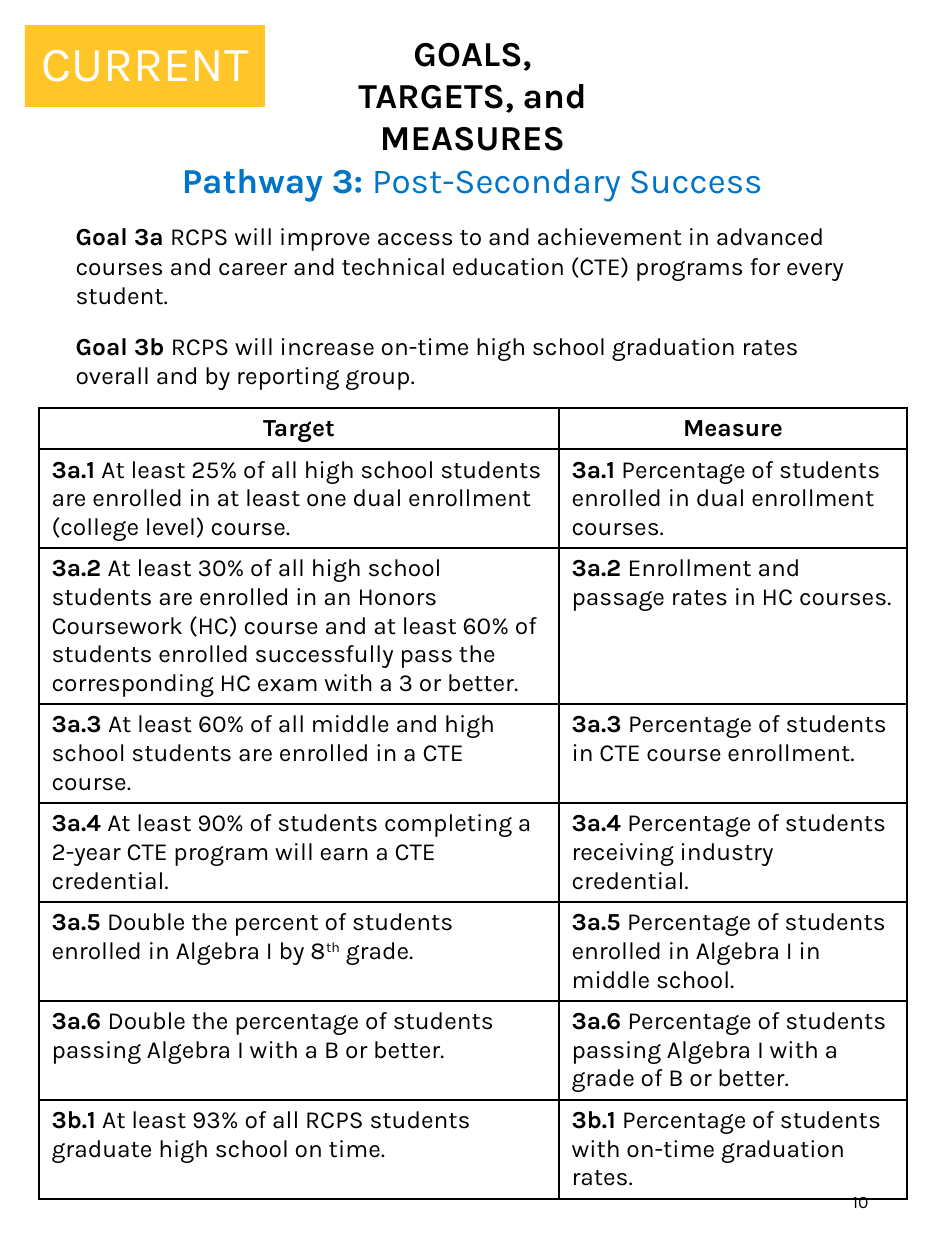
from lxml.etree import SubElement
from pptx import Presentation
from pptx.dml.color import RGBColor
from pptx.enum.shapes import MSO_SHAPE
from pptx.enum.text import MSO_ANCHOR, MSO_AUTO_SIZE, PP_ALIGN
from pptx.oxml.ns import qn
from pptx.util import Emu, Pt

PX_PER_INCH = 126
FONT = "Karla"
BLACK = RGBColor(0x00, 0x00, 0x00)
WHITE = RGBColor(0xFF, 0xFF, 0xFF)
BLUE = RGBColor(0x00, 0x74, 0xC8)
YELLOW = RGBColor(0xFF, 0xC5, 0x29)

COLUMN_WIDTHS = (520, 348)
ROW_HEIGHTS = (41, 99, 156, 99, 99, 99, 99, 99)

GOALS = [
    ("Goal 3a", "RCPS will improve access to and achievement in advanced courses and "
     "career and technical education (CTE) programs for every student."),
    ("Goal 3b", "RCPS will increase on-time high school graduation rates overall and "
     "by reporting group."),
]

# Code, target, measure; text between carets is superscript
TARGETS = [
    ("3a.1", "At least 25% of all high school students are enrolled in at least one "
     "dual enrollment (college level) course.",
     "Percentage of students enrolled in dual enrollment courses."),
    ("3a.2", "At least 30% of all high school students are enrolled in an Honors "
     "Coursework (HC) course and at least 60% of students enrolled successfully pass "
     "the corresponding HC exam with a 3 or better.",
     "Enrollment and passage rates in HC courses."),
    ("3a.3", "At least 60% of all middle and high school students are enrolled in a "
     "CTE course.",
     "Percentage of students in CTE course enrollment."),
    ("3a.4", "At least 90% of students completing a 2-year CTE program will earn a "
     "CTE credential.",
     "Percentage of students receiving industry credential."),
    ("3a.5", "Double the percent of students enrolled in Algebra I by 8^th^ grade.",
     "Percentage of students enrolled in Algebra I in middle school."),
    ("3a.6", "Double the percentage of students passing Algebra I with a B or better.",
     "Percentage of students passing Algebra I with a grade of B or better."),
    ("3b.1", "At least 93% of all RCPS students graduate high school on time.",
     "Percentage of students with on-time graduation rates."),
]


def px(length):
    return Emu(round(length * 914400 / PX_PER_INCH))


def place(shape, box):
    shape.left, shape.top, shape.width, shape.height = map(px, box)


def style_run(run, size, color=BLACK, bold=False):
    run.font.name = FONT
    run.font.size = Pt(size)
    run.font.color.rgb = color
    run.font.bold = bold


def write_labelled(paragraph, label, text, size, color=BLACK):
    """Bold label, then plain text with optional superscript."""
    run = paragraph.add_run()
    run.text = label + " "
    style_run(run, size, color, bold=True)
    for index, piece in enumerate(text.split("^")):
        run = paragraph.add_run()
        run.text = piece
        style_run(run, size, color)
        if index % 2:
            run._r.get_or_add_rPr().set("baseline", "30000")


def write_line(frame, text, size, align, color=BLACK, bold=False):
    frame.text = text
    paragraph = frame.paragraphs[0]
    paragraph.alignment = align
    style_run(paragraph.runs[0], size, color, bold)
    return paragraph


def add_heading(slide, box):
    heading = slide.shapes.title
    place(heading, box)
    frame = heading.text_frame
    frame.word_wrap = True
    frame.auto_size = MSO_AUTO_SIZE.NONE
    frame.vertical_anchor = MSO_ANCHOR.TOP
    frame.margin_left = frame.margin_right = px(20)
    write_line(frame, "GOALS, TARGETS, and MEASURES", 20, PP_ALIGN.CENTER, bold=True)


def add_goals(slide, box):
    goals = slide.placeholders[1]
    place(goals, box)
    frame = goals.text_frame
    frame.word_wrap = True
    frame.auto_size = MSO_AUTO_SIZE.NONE
    frame.vertical_anchor = MSO_ANCHOR.TOP

    pathway = frame.paragraphs[0]
    pathway.alignment = PP_ALIGN.CENTER
    write_labelled(pathway, "Pathway 3:", "Post-Secondary Success", 20, BLUE)
    for label, text in GOALS:
        write_labelled(frame.add_paragraph(), label, text, 14)

    for paragraph in frame.paragraphs:
        paragraph.space_before = Pt(0)
        paragraph.space_after = Pt(12)
        properties = paragraph._p.get_or_add_pPr()
        properties.set("marL", "0")
        properties.set("indent", "0")
        SubElement(properties, qn("a:buNone"))


def add_status_badge(slide, box):
    badge = slide.shapes.add_shape(MSO_SHAPE.RECTANGLE, *map(px, box))
    badge.shadow.inherit = False
    badge.fill.solid()
    badge.fill.fore_color.rgb = YELLOW
    badge.line.fill.background()
    badge.text_frame.vertical_anchor = MSO_ANCHOR.MIDDLE
    paragraph = write_line(badge.text_frame, "CURRENT", 28, PP_ALIGN.CENTER, WHITE)
    paragraph.line_spacing = 0.9


def frame_cell(cell):
    """No fill and a thin black border on every side."""
    properties = cell._tc.get_or_add_tcPr()
    for side in ("a:lnL", "a:lnR", "a:lnT", "a:lnB"):
        border = SubElement(properties, qn(side), w=str(Pt(1)))
        fill = SubElement(border, qn("a:solidFill"))
        SubElement(fill, qn("a:srgbClr"), val=str(BLACK))
    cell.fill.background()


def add_target_table(slide, left, top):
    box = (left, top, sum(COLUMN_WIDTHS), sum(ROW_HEIGHTS))
    table = slide.shapes.add_table(len(ROW_HEIGHTS), len(COLUMN_WIDTHS),
                                   *map(px, box)).table
    table.first_row = False
    table.horz_banding = False
    for column, width in zip(table.columns, COLUMN_WIDTHS):
        column.width = px(width)
    for row, height in zip(table.rows, ROW_HEIGHTS):
        row.height = px(height)

    for index, header in enumerate(("Target", "Measure")):
        write_line(table.cell(0, index).text_frame, header, 14,
                   PP_ALIGN.CENTER, bold=True)
    for row, (code, *texts) in enumerate(TARGETS, start=1):
        for column, text in enumerate(texts):
            paragraph = table.cell(row, column).text_frame.paragraphs[0]
            write_labelled(paragraph, code, text, 14)
    for cell in table.iter_cells():
        frame_cell(cell)


def add_page_number(slide, box):
    frame = slide.shapes.add_textbox(*map(px, box)).text_frame
    frame.word_wrap = True
    frame.vertical_anchor = MSO_ANCHOR.MIDDLE
    write_line(frame, "10", 10, PP_ALIGN.RIGHT)


def main():
    deck = Presentation()
    deck.slide_width, deck.slide_height = px(945), px(1260)
    slide = deck.slides.add_slide(deck.slide_layouts[1])
    add_goals(slide, (63, 152, 819, 256))
    add_heading(slide, (319, 25, 307, 69))
    add_status_badge(slide, (25, 25, 240, 82))
    add_target_table(slide, 39, 408)
    add_page_number(slide, (668, 1168, 213, 67))
    deck.save("out.pptx")


if __name__ == "__main__":
    main()
